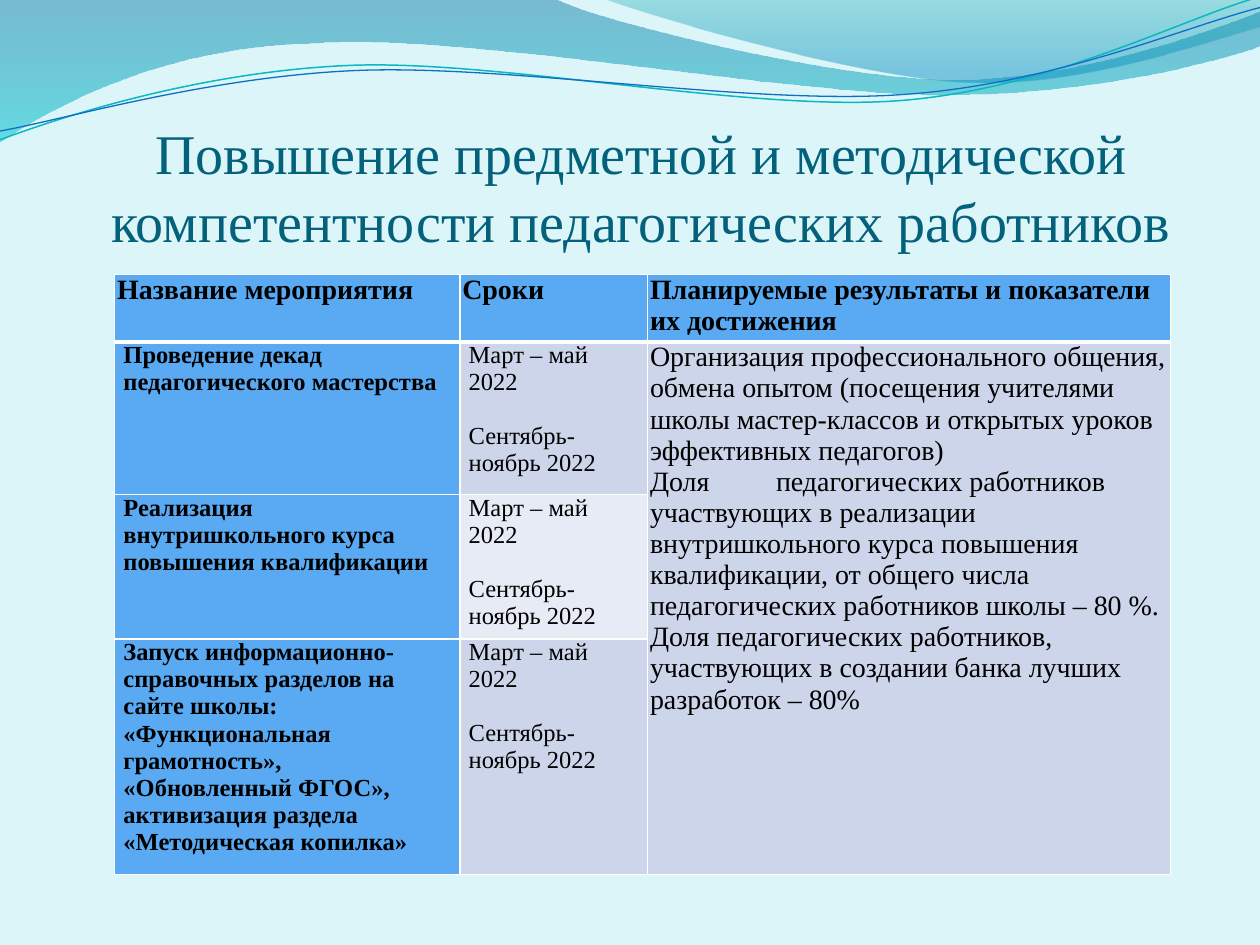
from collections import namedtuple

from lxml.etree import SubElement
from pptx import Presentation
from pptx.dml.color import RGBColor
from pptx.enum.text import MSO_ANCHOR, PP_ALIGN
from pptx.oxml import parse_xml
from pptx.oxml.ns import nsdecls, qn
from pptx.util import Inches, Pt

Box = namedtuple("Box", "left top width height")
FONT = "Times New Roman"
WHITE, BLACK = "FFFFFF", "000000"
ACCENT, BAND_DARK, BAND_LIGHT = "59AAF2", "CCD5EA", "E7EBF5"

TITLE = "Повышение предметной и методической компетентности педагогических работников"
HEADERS = ["Название мероприятия", "Сроки", "Планируемые результаты и показатели их достижения"]
EVENTS = [
    ["Проведение декад педагогического мастерства"],
    ["Реализация внутришкольного курса повышения квалификации"],
    ["Запуск информационно-справочных разделов на сайте школы: «Функциональная грамотность»,",
     "«Обновленный ФГОС», активизация раздела «Методическая копилка»"],
]
DATES = ["Март – май 2022", "Сентябрь- ноябрь 2022"]
RESULTS = [
    "Организация профессионального общения, обмена опытом (посещения учителями школы "
    "мастер-классов и открытых уроков эффективных педагогов)",
    "Доля\tпедагогических работников участвующих в реализации внутришкольного курса повышения "
    "квалификации, от общего числа педагогических работников школы – 80 %.",
    "Доля педагогических работников, участвующих в создании банка лучших разработок – 80%",
]
COLUMN_WIDTHS = [2.74, 1.49, 4.15]
ROW_HEIGHTS = [0.4, 1.21, 0.81, 1.21]

WAVES = [
    ([(0, 0), (4.4, -0.01), (4.76, 0.17, 6.64, 0.63, 7.58, 0.63),
      (8.53, 0.63, 9.58, 0.26, 10, 0.09), (10.01, 0.36),
      (9.83, 0.44, 8.7, 0.76, 7.46, 0.75), (6.22, 0.75, 3.82, 0.28, 2.57, 0.34),
      (1.29, 0.36, 0.46, 0.83, -0.01, 1.13)],
     [(0, "0074A1", 45), (1, "00C6CF", 55)]),
    ([(4.79, -0.01), (5.09, 0.11, 6.82, 0.62, 7.69, 0.65),
      (8.56, 0.69, 9.61, 0.32, 10, 0.21), (10, 0)],
     [(0, "00A1A9", 30), (0.8, "008BBF", 45)]),
]
STRANDS = [
    ([(0, 1.11), (0.48, 0.93, 1.58, 0.57, 2.77, 0.52), (3.95, 0.47, 5.93, 0.89, 7.13, 0.8),
      (8.33, 0.71, 9.38, 0.15, 9.98, -0.02)], "0AB8BF", 0.85),
    ([(0, 1.04), (0.47, 0.96, 1.64, 0.61, 2.83, 0.56), (4.03, 0.51, 5.97, 0.84, 7.17, 0.75),
      (8.36, 0.67, 9.41, 0.21, 10, 0.06)], "0F6FC6", 0.75),
]


def color(value):
    """Return the colour for a hex string."""
    return RGBColor.from_string(value)


def add_outline(slide, box, segments, close):
    """Draw lines and cubic curves on a grid of ten units across the box."""
    unit = box.width / 10
    points = [(round(box.left + segment[index] * unit), round(box.top + segment[index + 1] * unit))
              for segment in segments for index in range(0, len(segment), 2)]
    builder = slide.shapes.build_freeform(*points[0])
    builder.add_line_segments(points[1:], close=close)
    shape = builder.convert_to_shape()
    shape.shadow.inherit = False
    lines = iter(list(shape._element.iter(qn("a:lnTo"))))
    for segment in segments[1:]:
        line = next(lines)
        if len(segment) == 6:
            line.tag = qn("a:cubicBezTo")
            for _ in range(2):
                following = next(lines)
                line.append(following[0])
                following.getparent().remove(following)
    return shape


def add_waves(slide, box):
    """Draw the translucent waves and the thin strands over them."""
    for segments, stops in WAVES:
        shape = add_outline(slide, box, segments, True)
        shape.line.fill.background()
        shape.fill.gradient()
        shape.fill.gradient_angle = 270
        for stop, (position, value, _) in zip(shape.fill.gradient_stops, stops):
            stop.position = position
            stop.color.rgb = color(value)
        elements = list(shape._element.spPr.iter(qn("a:srgbClr")))
        for element, (_, _, opacity) in zip(elements, stops):
            SubElement(element, qn("a:alpha"), val=str(opacity * 1000))
    for segments, value, width in STRANDS:
        shape = add_outline(slide, box, segments, False)
        shape.fill.background()
        shape.line.color.rgb = color(value)
        shape.line.width = Pt(width)


def write(frame, texts, size, value, bold=False, gap=0, alignment=PP_ALIGN.LEFT):
    """Fill a text frame with evenly styled paragraphs."""
    for index, text in enumerate(texts):
        paragraph = frame.add_paragraph() if index else frame.paragraphs[0]
        paragraph.text = text
        paragraph.alignment = alignment
        if gap and index:
            paragraph.space_before = Pt(gap)
        paragraph.font.name = FONT
        paragraph.font.size = Pt(size)
        paragraph.font.bold = bold
        paragraph.font.color.rgb = color(value)


def add_tab_stop(paragraph, position):
    """Give a paragraph one left tab stop."""
    tabs = parse_xml(f'<a:tabLst {nsdecls("a")}><a:tab pos="{position}" algn="l"/></a:tabLst>')
    paragraph._p.pPr.find(qn("a:defRPr")).addprevious(tabs)


def add_title(slide, box):
    """Place the centred title at the bottom of its box."""
    frame = slide.shapes.add_textbox(*box).text_frame
    frame.word_wrap = True
    frame.vertical_anchor = MSO_ANCHOR.BOTTOM
    frame.margin_left = frame.margin_right = frame.margin_bottom = 0
    write(frame, [TITLE], 32, "04617B", alignment=PP_ALIGN.CENTER)


def style_cell(cell, fill, margin, bottom_width=1):
    """Set the fill, margins and white borders of a cell."""
    cell.fill.solid()
    cell.fill.fore_color.rgb = color(fill)
    cell.margin_left = cell.margin_right = Inches(margin)
    cell.margin_top = cell.margin_bottom = 0
    properties = cell._tc.get_or_add_tcPr()
    for index, side in enumerate("LRTB"):
        width = Pt(bottom_width if side == "B" else 1)
        properties.insert(index, parse_xml(
            f'<a:ln{side} {nsdecls("a")} w="{width}"><a:solidFill>'
            f'<a:srgbClr val="{WHITE}"/></a:solidFill></a:ln{side}>'))


def add_plan(slide, box):
    """Place the table of events, dates and expected results."""
    table = slide.shapes.add_table(len(ROW_HEIGHTS), len(COLUMN_WIDTHS), *box).table
    table.horz_banding = False
    for column, width in zip(table.columns, COLUMN_WIDTHS):
        column.width = round(box.width * width / sum(COLUMN_WIDTHS))
    for row, height in zip(table.rows, ROW_HEIGHTS):
        row.height = round(box.height * height / sum(ROW_HEIGHTS))
    for index, header in enumerate(HEADERS):
        cell = table.cell(0, index)
        style_cell(cell, ACCENT, 0.02, 3)
        write(cell.text_frame, [header], 16, BLACK, True)
    for index, event in enumerate(EVENTS, 1):
        name, dates, results = (table.cell(index, column) for column in range(3))
        style_cell(name, ACCENT, 0.07)
        write(name.text_frame, event, 14, BLACK, True)
        style_cell(dates, BAND_DARK if index % 2 else BAND_LIGHT, 0.07)
        write(dates.text_frame, DATES, 14, BLACK, gap=15.4)
        style_cell(results, BAND_DARK, 0.02)
    results = table.cell(1, 2)
    results.merge(table.cell(len(EVENTS), 2))
    write(results.text_frame, RESULTS, 16, BLACK)
    add_tab_stop(results.text_frame.paragraphs[1], Inches(1))


def main():
    """Build and save the slide."""
    presentation = Presentation()
    presentation.slide_width, presentation.slide_height = Inches(10), Inches(7.5)
    slide = presentation.slides.add_slide(presentation.slide_layouts[6])
    slide.background.fill.solid()
    slide.background.fill.fore_color.rgb = color("DBF5F9")
    add_waves(slide, Box(0, 0, presentation.slide_width, presentation.slide_height))
    add_title(slide, Box(*map(Inches, (0.59, 0.99, 9, 1.02))))
    add_plan(slide, Box(*map(Inches, (0.91, 2.18, sum(COLUMN_WIDTHS), sum(ROW_HEIGHTS)))))
    presentation.save("out.pptx")


if __name__ == "__main__":
    main()
